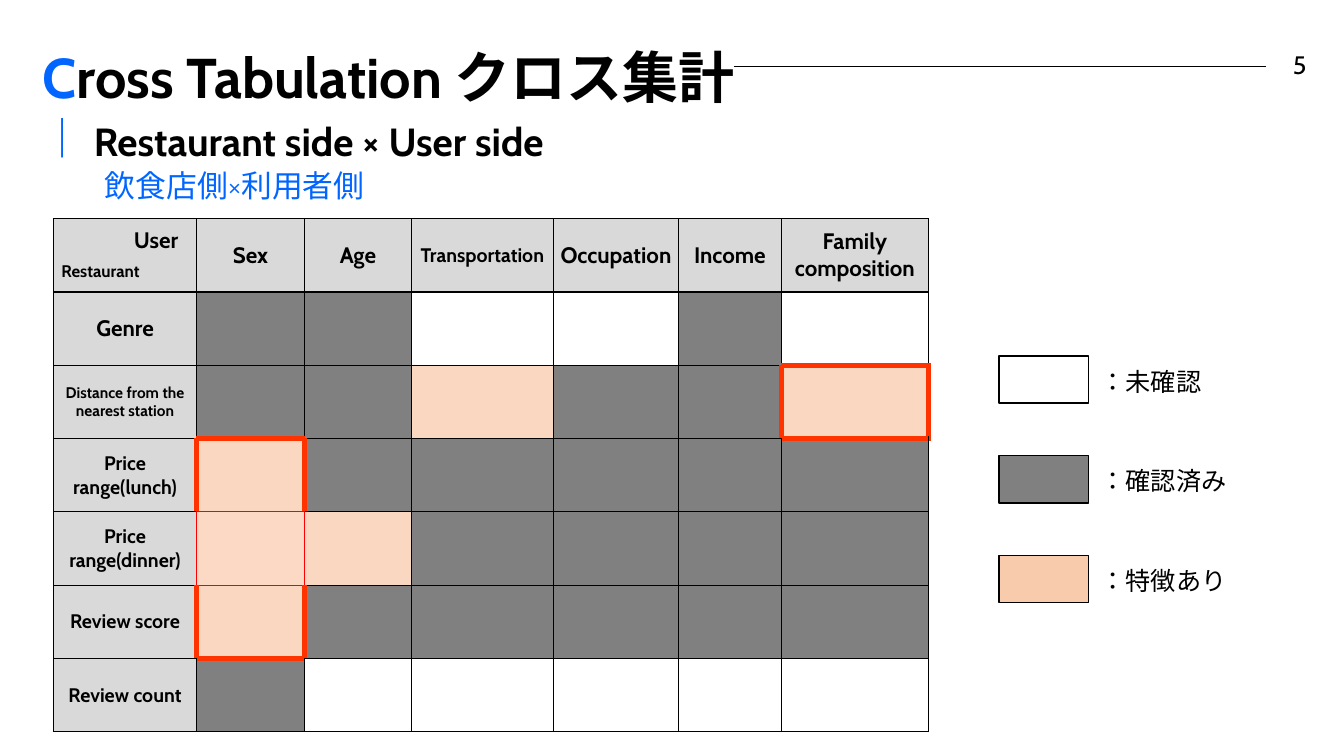
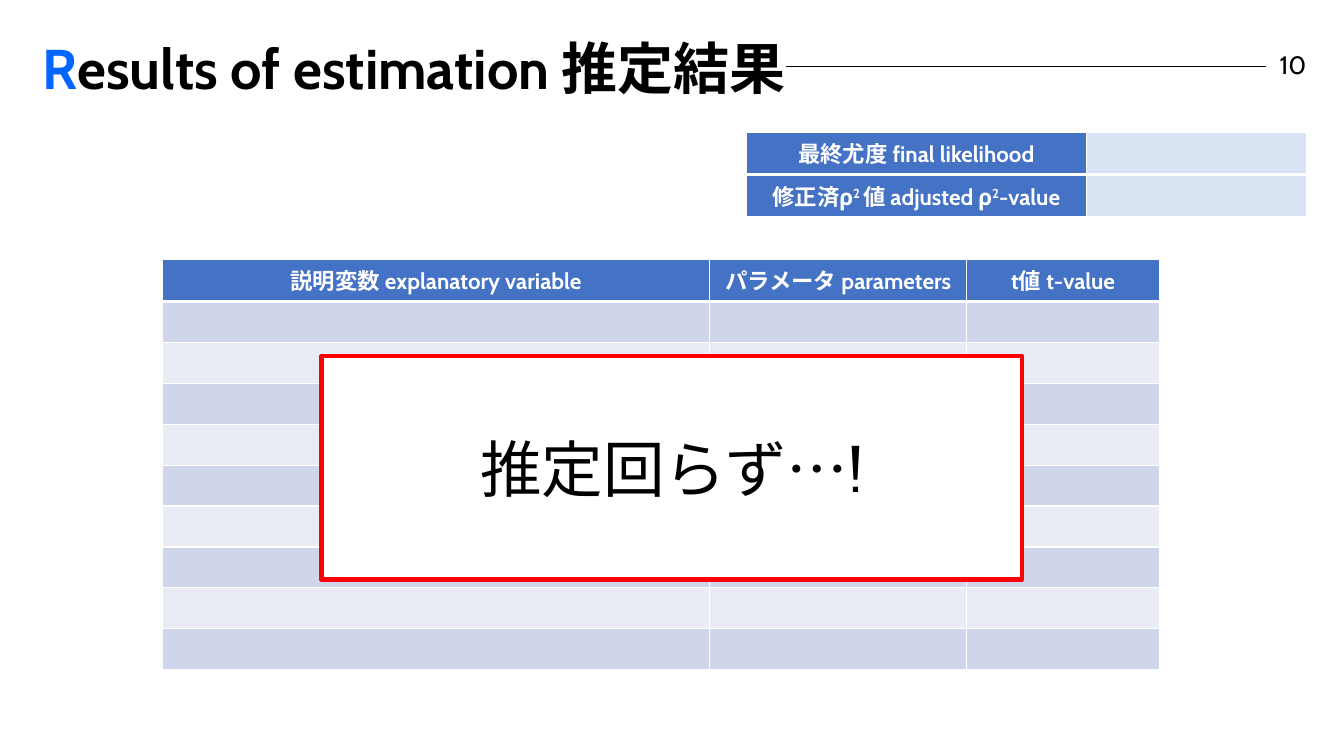
from dataclasses import dataclass
from typing import NamedTuple

from lxml import etree
from pptx import Presentation
from pptx import util as u
from pptx.dml.color import RGBColor
from pptx.enum import lang, shapes, text
from pptx.oxml import ns

SLIDE_W, SLIDE_H = u.Inches(13.333), u.Inches(7.5)
TITLE_ONLY = 5
CENTER, RIGHT = text.PP_ALIGN.CENTER, text.PP_ALIGN.RIGHT
MIDDLE = text.MSO_ANCHOR.MIDDLE


@dataclass(frozen=True)
class Theme:
    font: str = "Cabin"
    black: str = "000000"
    white: str = "FFFFFF"
    accent: str = "0066FF"
    label: str = "D9D9D9"
    checked: str = "808080"
    notable: str = "ED7D31"
    notable_solid: str = "FCD9C5"
    notable_key: str = "F8CBAD"
    frame: str = "FF3300"
    red: str = "FF0000"
    header: str = "4472C4"
    band: str = "CFD5EA"
    band_light: str = "E9EBF5"
    value: str = "DAE3F3"
    title_pt: int = 40
    heading_pt: int = 28
    subheading_pt: int = 22
    notice_pt: int = 44
    body_pt: int = 18
    cell_pt: int = 16
    cell_small_pt: int = 14
    note_pt: int = 12
    cell_tiny_pt: int = 11


T = Theme()


class Box(NamedTuple):
    """A rectangle in percent of the slide's width and height."""
    x: float
    y: float
    w: float
    h: float

    def emu(self) -> tuple:
        return across(self.x), down(self.y), across(self.w), down(self.h)


class Edge(NamedTuple):
    color: str
    pt: float


class Label(NamedTuple):
    text: str
    size: int = T.cell_pt


class Key(NamedTuple):
    color: str
    text: str


def across(pct: float) -> int:
    return round(SLIDE_W * pct / 100)


def down(pct: float) -> int:
    return round(SLIDE_H * pct / 100)


def rgb(color: str) -> RGBColor:
    return RGBColor.from_string(color)


def sub(parent, tag: str, **attrs):
    return etree.SubElement(parent, ns.qn(tag), **attrs)


def add_run(p, content: str, *, size: int = T.body_pt, color: str = T.black, bold: bool = False,
            highlight: str = "", raised: bool = False):
    r = p.add_run()
    r.text = content
    f = r.font
    f.size, f.bold, f.name = u.Pt(size), bold, T.font
    f.color.rgb = rgb(color)
    f.language_id = lang.MSO_LANGUAGE_ID.JAPANESE
    rpr = r._r.get_or_add_rPr()
    if raised:
        rpr.set("baseline", "30000")
    if highlight:
        mark = etree.Element(ns.qn("a:highlight"))
        sub(mark, "a:srgbClr", val=highlight)
        rpr.find(ns.qn("a:solidFill")).addnext(mark)
    return r


def set_margins(obj, left: float, top: float, right: float, bottom: float) -> None:
    obj.margin_left, obj.margin_top = u.Inches(left), u.Inches(top)
    obj.margin_right, obj.margin_bottom = u.Inches(right), u.Inches(bottom)


def add_text(s, box: Box, content: str, *, align=None, wrap: bool = True, **fmt):
    """Add a text box of one line and return its text frame."""
    tf = s.shapes.add_textbox(*box.emu()).text_frame
    tf.word_wrap = wrap
    tf.auto_size = text.MSO_AUTO_SIZE.SHAPE_TO_FIT_TEXT
    p = tf.paragraphs[0]
    p.alignment = align
    add_run(p, content, **fmt)
    return tf


def add_rect(s, box: Box, fill: str, edge: Edge):
    sp = s.shapes.add_shape(shapes.MSO_SHAPE.RECTANGLE, *box.emu())
    sp.shadow.inherit = False
    sp.fill.solid()
    sp.fill.fore_color.rgb = rgb(fill)
    sp.line.color.rgb = rgb(edge.color)
    sp.line.width = u.Pt(edge.pt)
    return sp


def style_cell(cell, fill: str, edges: dict[str, Edge], alpha: int = 100) -> None:
    """Set the borders (keys L, R, T, B) and the fill of a cell."""
    tcpr = cell._tc.get_or_add_tcPr()
    for side in "LRTB":
        edge = edges[side]
        ln = sub(tcpr, f"a:ln{side}", w=str(u.Pt(edge.pt)))
        sub(sub(ln, "a:solidFill"), "a:srgbClr", val=edge.color)
    cell.fill.solid()
    cell.fill.fore_color.rgb = rgb(fill)
    if alpha < 100:
        sub(tcpr.find(f"{ns.qn('a:solidFill')}/{ns.qn('a:srgbClr')}"), "a:alpha", val=str(alpha * 1000))


def add_table(s, x: float, y: float, h: float, widths: list[float], rows: int):
    box = Box(x, y, sum(widths), h)
    table = s.shapes.add_table(rows, len(widths), *box.emu()).table
    table.first_row = table.horz_banding = False
    for col, width in zip(table.columns, widths):
        col.width = across(width)
    for row in table.rows:
        row.height = down(h / rows)
    return table


def fill_cell_text(cell, content: str, **fmt):
    p = cell.text_frame.paragraphs[0]
    p.alignment = CENTER
    add_run(p, content, bold=True, **fmt)
    return p


def add_rule_to_layout(prs, s) -> None:
    """Draw the title rule and move it to the layout, behind every title."""
    y = down(8.8)
    cn = s.shapes.add_connector(shapes.MSO_CONNECTOR.STRAIGHT, across(20.63), y, across(94.2), y)
    cn.line.color.rgb = rgb(T.black)
    cn.line.width = u.Pt(1.25)
    sub(cn.element.spPr, "a:effectLst")
    prs.slide_layouts[TITLE_ONLY].shapes.element.append(cn.element)


def add_titled_slide(prs, title: str, number: str, title_y: float):
    s = prs.slides.add_slide(prs.slide_layouts[TITLE_ONLY])
    sp = s.shapes.title
    sp.left, sp.top, sp.width, sp.height = Box(3.15, title_y, 88.58, 13.33).emu()
    tf = sp.text_frame
    tf.auto_size = text.MSO_AUTO_SIZE.NONE
    tf.vertical_anchor = MIDDLE
    set_margins(tf, 0, 0.02, 0, 0)
    p = tf.paragraphs[0]
    p.alignment = text.PP_ALIGN.LEFT
    for part, color in ((title[0], T.accent), (title[1:], T.black)):
        add_run(p, part, size=T.title_pt, color=color, bold=True, highlight=T.white)
    tf = add_text(s, Box(91.73, 2.13, 5.48, 13.33), number, align=RIGHT)
    tf.auto_size = text.MSO_AUTO_SIZE.NONE
    tf.vertical_anchor = MIDDLE
    set_margins(tf, 0, 0, 0, 0.04)
    return s


def add_heading(s) -> None:
    tf = s.shapes.add_textbox(*Box(3.15, 15.47, 94.05, 13.5).emu()).text_frame
    tf.word_wrap = True
    set_margins(tf, 0.12, 0, 0, 0)
    p = tf.paragraphs[0]
    ppr = p._p.get_or_add_pPr()
    ppr.set("marL", str(u.Inches(0.39)))
    ppr.set("indent", str(-u.Inches(0.39)))
    sub(sub(ppr, "a:buClr"), "a:srgbClr", val=T.accent)
    sub(ppr, "a:buChar", char="|")
    add_run(p, "Restaurant side × User side", size=T.heading_pt, bold=True)
    p = tf.add_paragraph()
    p._p.get_or_add_pPr().set("marL", str(u.Inches(0.5)))
    p.line_spacing, p.space_before = 0.9, u.Pt(5)
    add_run(p, "飲食店側×利用者側", size=T.subheading_pt, color=T.accent)


USER_LABELS = [Label("Sex"), Label("Age"), Label("Transportation", T.cell_small_pt),
               Label("Occupation"), Label("Income"), Label("Family composition")]
RESTAURANT_LABELS = [
    Label("Genre"), Label("Distance from the nearest station", T.cell_tiny_pt),
    *(Label(name, T.cell_small_pt) for name in
      ("Price range(lunch)", "Price range(dinner)", "Review score", "Review count"))]
# L label, C checked, N notable, S notable without transparency, - unchecked
STATES = ["LLLLLLL", "LCC--C-", "LCCNCCN", "LNCCCCC", "LSNCCCC", "LNCCCCC", "LC-----"]
STATE_FILLS = {"L": (T.label, 100), "C": (T.checked, 100), "N": (T.notable, 30),
               "S": (T.notable_solid, 100), "-": (T.white, 100)}
THICK, THIN = Edge(T.frame, 4.5), Edge(T.red, 1)
FRAMES = {(2, 6): THICK, (3, 1): THICK, (5, 1): THICK, (4, 1): THIN}


def framed_edges(rows: int, cols: int) -> dict:
    """Edges of every cell; a frame also colours the sides its neighbours share."""
    edges = {(r, c): dict.fromkeys("LRTB", Edge(T.black, 1))
             for r in range(rows) for c in range(cols)}
    for (r, c), edge in FRAMES.items():
        for side, facing, near in (("L", "R", (r, c - 1)), ("R", "L", (r, c + 1)),
                                   ("T", "B", (r - 1, c)), ("B", "T", (r + 1, c))):
            edges[r, c][side] = edge
            if near in edges:
                edges[near][facing] = edge
    return edges


def add_cross_table(s) -> None:
    widths = [10.65, 8.03, 7.95, 10.58, 9.3, 7.65, 10.95]
    table = add_table(s, 3.98, 28.93, 67.87, widths, len(STATES))
    labels = {(0, c): item for c, item in enumerate(USER_LABELS, 1)}
    labels |= {(r, 0): item for r, item in enumerate(RESTAURANT_LABELS, 1)}
    for (r, c), edges in framed_edges(len(STATES), len(widths)).items():
        cell = table.cell(r, c)
        fill, alpha = STATE_FILLS[STATES[r][c]]
        style_cell(cell, fill, edges, alpha)
        if (r, c) in labels:
            cell.vertical_anchor = MIDDLE
            set_margins(cell, 0.02, 0.01, 0.02, 0.01)
            fill_cell_text(cell, labels[r, c].text, size=labels[r, c].size)
    add_text(s, Box(3.83, 33.87, 7.88, 4), "Restaurant", wrap=False, size=T.note_pt, bold=True)
    add_text(s, Box(9.23, 29.2, 5.03, 4.93), "User", wrap=False, size=T.cell_pt, bold=True)


def add_legend(s) -> None:
    keys = [Key(T.white, "：未確認"), Key(T.checked, "：確認済み"), Key(T.notable_key, "：特徴あり")]
    for i, key in enumerate(keys):
        y = 47.07 + 13.2 * i
        add_rect(s, Box(74.33, y, 6.68, 6.27), key.color, Edge(T.black, 1))
        add_text(s, Box(81.15, y + 0.67, 13.35, 5.33), key.text)


def white_edges(first_row: bool) -> dict[str, Edge]:
    return dict.fromkeys("LRT", Edge(T.white, 1)) | {"B": Edge(T.white, 3 if first_row else 1)}


def add_parameter_table(s) -> None:
    heads = ["説明変数 explanatory variable", "パラメータ parameters", "t値 t-value"]
    rows = 10
    table = add_table(s, 12.08, 34.27, 54.13, [40.73, 19.13, 14.33], rows)
    for r in range(rows):
        fill = T.header if r == 0 else T.band if r % 2 else T.band_light
        for c, head in enumerate(heads):
            style_cell(table.cell(r, c), fill, white_edges(r == 0))
            if r == 0:
                fill_cell_text(table.cell(r, c), head, size=T.cell_pt, color=T.white)


def add_fit_table(s) -> None:
    fmt = dict(size=T.cell_pt, color=T.white)
    table = add_table(s, 55.5, 17.47, 10.8, [25.35, 16.35], 2)
    for r in range(2):
        for c, fill in enumerate((T.header, T.value)):
            style_cell(table.cell(r, c), fill, white_edges(r == 0))
    fill_cell_text(table.cell(0, 0), "最終尤度 final likelihood", **fmt)
    p = fill_cell_text(table.cell(1, 0), "修正済ρ", **fmt)
    for part, raised in (("2 ", True), ("値 adjusted ρ", False), ("2", True), ("-value", False)):
        add_run(p, part, bold=True, raised=raised, **fmt)


def add_notice(s) -> None:
    tf = add_rect(s, Box(23.93, 47.07, 52.13, 29.6), T.white, Edge(T.red, 3)).text_frame
    tf.vertical_anchor = MIDDLE
    p = tf.paragraphs[0]
    p.alignment = CENTER
    add_run(p, "推定回らず…!", size=T.notice_pt)


def main() -> None:
    prs = Presentation()
    prs.slide_width, prs.slide_height = SLIDE_W, SLIDE_H

    s = add_titled_slide(prs, "Cross Tabulation クロス集計", "5", 3.33)
    add_rule_to_layout(prs, s)
    add_heading(s)
    add_cross_table(s)
    add_legend(s)

    s = add_titled_slide(prs, "Results of estimation 推定結果", "10", 2.13)
    add_parameter_table(s)
    add_fit_table(s)
    add_notice(s)

    prs.save("out.pptx")


if __name__ == "__main__":
    main()
